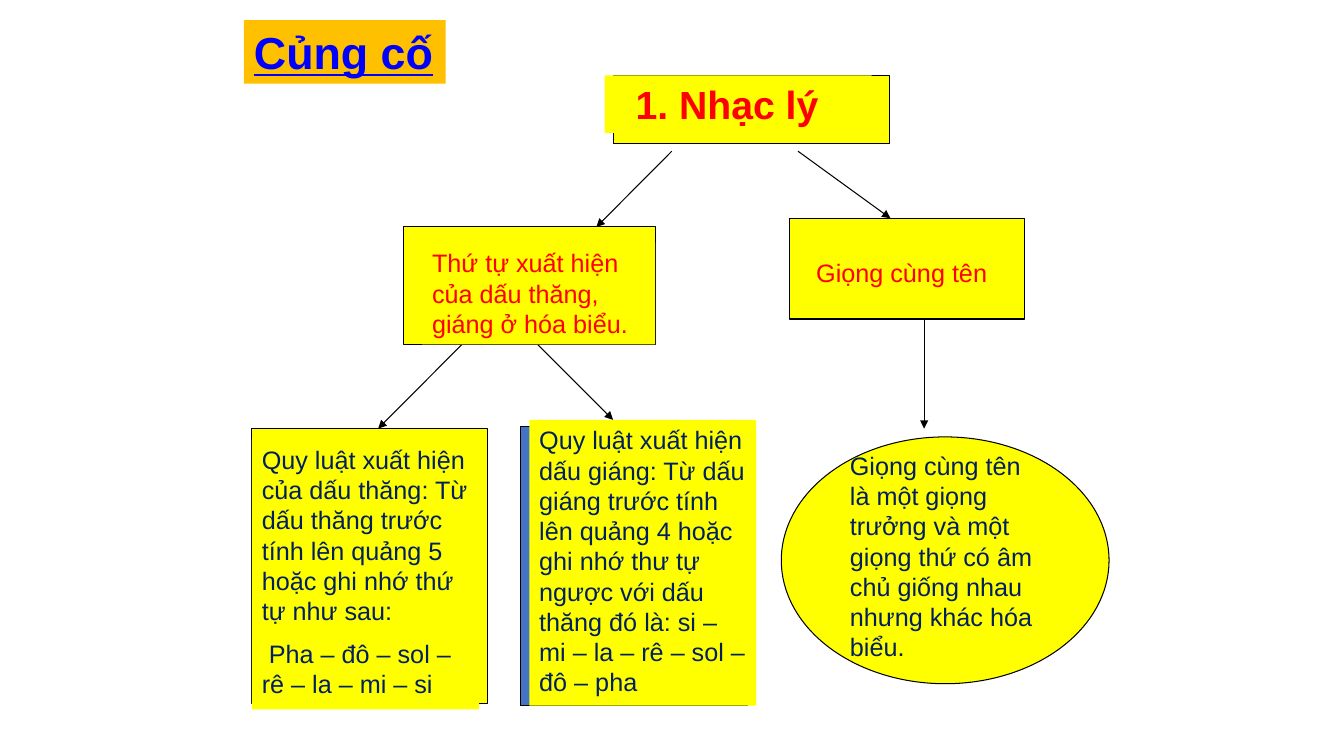
from lxml.etree import SubElement
from pptx import Presentation
from pptx.dml.color import RGBColor
from pptx.enum.shapes import MSO_CONNECTOR, MSO_SHAPE
from pptx.enum.text import MSO_ANCHOR, PP_ALIGN
from pptx.oxml.ns import qn
from pptx.util import Cm, Pt

YELLOW = RGBColor(0xFF, 0xFF, 0x00)
ORANGE = RGBColor(0xFF, 0xC0, 0x00)
STEEL = RGBColor(0x44, 0x72, 0xC4)
RED = RGBColor(0xFF, 0x00, 0x00)
BLUE = RGBColor(0x00, 0x00, 0xFF)
NAVY = RGBColor(0x00, 0x20, 0x60)
BLACK = RGBColor(0x00, 0x00, 0x00)

FONT = "Arial"
BODY_SIZE = 18
PARAGRAPH_GAP = Pt(9)
PADDING = 0.25

# Boxes are left, top, width, height in centimetres.
HEADING = ("Củng cố", (6.15, 0.51, 5.08, 1.6))
TOPIC = ("1. Nhạc lý", (15.45, 1.9, 6.98, 1.73), (15.24, 1.9, 6.73, 1.45))
TOPIC_INDENT = 0.78

# Outline shape, outline box, outline fill, label box, label fill, ink, paragraphs
NODES = [
    (MSO_SHAPE.RECTANGLE, (10.16, 5.72, 6.35, 2.96), YELLOW,
     (10.64, 6.12, 5.87, 2.56), YELLOW, RED,
     ["Thứ tự xuất hiện của dấu thăng, giáng ở hóa biểu."]),
    (MSO_SHAPE.RECTANGLE, (19.9, 5.5, 5.93, 2.54), YELLOW,
     (20.32, 6.35, 4.87, 1.03), None, RED,
     ["Giọng cùng tên"]),
    (MSO_SHAPE.RECTANGLE, (13.12, 10.74, 5.72, 7.04), STEEL,
     (13.34, 10.58, 5.72, 7.2), YELLOW, NAVY,
     ["Quy luật xuất hiện dấu giáng: Từ dấu giáng trước tính lên quảng 4 "
      "hoặc ghi nhớ thư tự ngược với dấu thăng đó là: "
      "si – mi – la – rê – sol – đô – pha"]),
    (MSO_SHAPE.OVAL, (19.69, 11.01, 8.26, 6.22), YELLOW,
     (21.17, 11.22, 5.29, 5.64), None, NAVY,
     ["Giọng cùng tên là một giọng trưởng và một giọng thứ có âm chủ "
      "giống nhau nhưng khác hóa biểu."]),
    (MSO_SHAPE.RECTANGLE, (6.35, 10.8, 5.93, 6.93), YELLOW,
     (6.35, 11.07, 5.72, 6.81), YELLOW, NAVY,
     ["Quy luật xuất hiện của dấu thăng: Từ dấu thăng trước tính lên "
      "quảng 5 hoặc ghi nhớ thứ tự như sau:",
      " Pha – đô – sol – rê – la – mi – si"]),
]

# Start x, start y, end x, end y
ARROWS = [
    (20.11, 3.81, 22.44, 5.5),
    (16.93, 3.81, 15.03, 5.72),
    (11.64, 8.68, 9.53, 10.8),
    (13.55, 8.68, 15.45, 10.58),
    (23.29, 8.04, 23.29, 10.8),
]


def add_outline(slide, preset, box, fill):
    outline = slide.shapes.add_shape(preset, *map(Cm, box))
    outline.shadow.inherit = False
    outline.fill.solid()
    outline.fill.fore_color.rgb = fill
    outline.line.color.rgb = BLACK
    outline.line.width = Pt(0.75)


def add_label(slide, box, fill, paragraphs, ink, size=BODY_SIZE,
              bold=False, underline=False, wrap=True, indent=PADDING):
    label = slide.shapes.add_textbox(*map(Cm, box))
    if fill is not None:
        label.fill.solid()
        label.fill.fore_color.rgb = fill
    frame = label.text_frame
    frame.word_wrap = wrap
    frame.vertical_anchor = MSO_ANCHOR.TOP
    frame.margin_left = Cm(indent)
    for index, wording in enumerate(paragraphs):
        paragraph = frame.add_paragraph() if index else frame.paragraphs[0]
        paragraph.alignment = PP_ALIGN.LEFT
        if index:
            paragraph.space_before = PARAGRAPH_GAP
        run = paragraph.add_run()
        run.text = wording
        run.font.name = FONT
        run.font.size = Pt(size)
        run.font.bold = bold
        run.font.underline = underline
        run.font.color.rgb = ink


def add_arrow(slide, ends):
    arrow = slide.shapes.add_connector(MSO_CONNECTOR.STRAIGHT, *map(Cm, ends))
    arrow.line.color.rgb = BLACK
    arrow.line.width = Pt(0.75)
    SubElement(arrow.line._get_or_add_ln(), qn("a:tailEnd"), type="triangle")
    SubElement(arrow._element.spPr, qn("a:effectLst"))


def main():
    deck = Presentation()
    deck.slide_width, deck.slide_height = Cm(33.87), Cm(19.05)
    slide = deck.slides.add_slide(deck.slide_layouts[6])

    heading, heading_box = HEADING
    add_label(slide, heading_box, ORANGE, [heading], BLUE, size=32,
              bold=True, underline=True, wrap=False)

    for ends in ARROWS:
        add_arrow(slide, ends)

    for preset, outline_box, outline_fill, label_box, label_fill, ink, paragraphs in NODES:
        add_outline(slide, preset, outline_box, outline_fill)
        add_label(slide, label_box, label_fill, paragraphs, ink)

    topic, topic_outline, topic_label = TOPIC
    add_outline(slide, MSO_SHAPE.RECTANGLE, topic_outline, YELLOW)
    add_label(slide, topic_label, YELLOW, [topic], RED, size=28,
              bold=True, indent=TOPIC_INDENT)

    deck.save("out.pptx")


if __name__ == "__main__":
    main()
